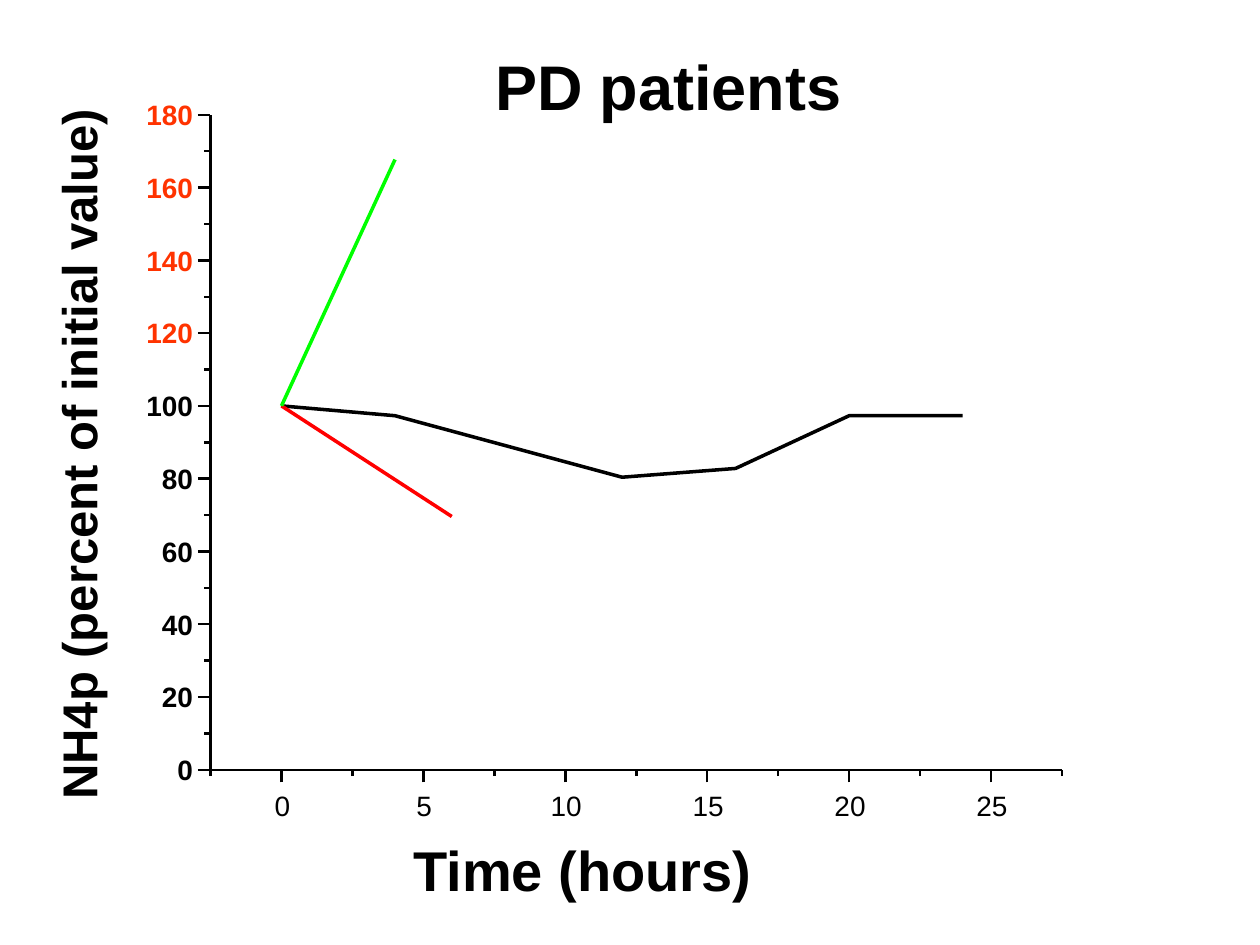
from lxml import etree
from pptx import Presentation
from pptx.dml.color import RGBColor
from pptx.enum.shapes import MSO_CONNECTOR
from pptx.enum.text import MSO_AUTO_SIZE, PP_ALIGN
from pptx.oxml.ns import qn
from pptx.util import Pt

STRAIGHT = MSO_CONNECTOR.STRAIGHT
FIT_TEXT = MSO_AUTO_SIZE.SHAPE_TO_FIT_TEXT
LEFT, CENTER, RIGHT = PP_ALIGN.LEFT, PP_ALIGN.CENTER, PP_ALIGN.RIGHT

COLORS = {"black": "000000", "orange": "FF3300", "red": "FF0000", "green": "00FF00"}
AXIS_LEFT, AXIS_RIGHT = 120.3, 606.9
AXIS_TOP, AXIS_BOTTOM = 65.6, 439.9
HOUR = (AXIS_RIGHT - AXIS_LEFT) / 30
PERCENT = (AXIS_BOTTOM - AXIS_TOP) / 180
ZERO_HOUR = AXIS_LEFT + 2.5 * HOUR
AXIS_WIDTH, SERIES_WIDTH = 1.38, 2
DIGIT_WIDTH, LABEL_HEIGHT = 8.9, 19.4

presentation = Presentation()
presentation.slide_width, presentation.slide_height = Pt(720), Pt(540)
slide = presentation.slides.add_slide(presentation.slide_layouts[6])


def add_text(text, box, size, bold=True, color="black", align=LEFT, inset=(0, 0)):
    shape = slide.shapes.add_textbox(*(Pt(length) for length in box))
    frame = shape.text_frame
    horizontal, vertical = (Pt(length) for length in inset)
    frame_format = {
        "margin_left": horizontal, "margin_right": horizontal,
        "margin_top": vertical, "margin_bottom": vertical,
        "word_wrap": False, "auto_size": FIT_TEXT,
    }
    for name, value in frame_format.items():
        setattr(frame, name, value)
    paragraph = frame.paragraphs[0]
    paragraph.alignment = align
    run = paragraph.add_run()
    run.text = text
    for name, value in {"name": "Arial", "size": Pt(size), "bold": bold}.items():
        setattr(run.font, name, value)
    run.font.color.rgb = RGBColor.from_string(COLORS[color])
    return shape


def add_line(start, end, width=AXIS_WIDTH, color="black"):
    connector = slide.shapes.add_connector(
        STRAIGHT, *(Pt(length) for length in (*start, *end)))
    connector.line.width = Pt(width)
    connector.line.color.rgb = RGBColor.from_string(COLORS[color])
    etree.SubElement(connector._element.spPr, qn("a:effectLst"))


value_title = add_text("NH4p (percent of initial value)", (-160.6, 238.3, 410.4, 41),
                       28, inset=(7.2, 3.6))
value_title.rotation = 270
add_text("Time (hours)", (236.2, 477.4, 193.7, 38.2), 32)

for hour in range(0, 26, 5):
    width = DIGIT_WIDTH * len(str(hour))
    left = ZERO_HOUR + hour * HOUR + 0.5 - width / 2
    add_text(str(hour), (left, 450.7, width, LABEL_HEIGHT), 16, bold=False, align=CENTER)

for percent in range(0, 181, 20):
    width = DIGIT_WIDTH * len(str(percent))
    top = AXIS_BOTTOM - percent * PERCENT - 9.8
    add_text(str(percent), (110.3 - width, top, width, LABEL_HEIGHT), 16,
             color="orange" if percent > 100 else "black", align=RIGHT)

for index in range(13):
    x = AXIS_LEFT + index * 2.5 * HOUR
    length = 7.2 if index % 2 else 3.6
    add_line((x, AXIS_BOTTOM + length), (x, AXIS_BOTTOM))
add_line((AXIS_LEFT, AXIS_BOTTOM), (AXIS_RIGHT, AXIS_BOTTOM))

for index in range(19):
    y = AXIS_BOTTOM - index * 10 * PERCENT
    length = 3.6 if index % 2 else 7.2
    add_line((AXIS_LEFT - length, y), (AXIS_LEFT, y))
add_line((AXIS_LEFT, AXIS_BOTTOM), (AXIS_LEFT, AXIS_TOP))

SERIES = [
    ("black", [(0, 100), (4, 97.3), (12, 80.4), (16, 82.8), (20, 97.3), (24, 97.3)]),
    ("red", [(0, 100), (6, 69.6)]),
    ("green", [(0, 100), (4, 167.7)]),
]
for color, values in SERIES:
    points = [(ZERO_HOUR + hour * HOUR, AXIS_BOTTOM - percent * PERCENT)
              for hour, percent in values]
    if len(points) == 2:
        add_line(*points, SERIES_WIDTH, color)
        continue
    corners = [(Pt(x), Pt(y)) for x, y in points]
    builder = slide.shapes.build_freeform(*corners[0])
    builder.add_line_segments(corners[1:], close=False)
    curve = builder.convert_to_shape()
    curve.shadow.inherit = False
    curve.fill.background()
    curve.line.width = Pt(SERIES_WIDTH)
    curve.line.color.rgb = RGBColor.from_string(COLORS[color])

add_text("PD patients", (275.8, 23.8, 212.4, 50.4), 36, inset=(7.2, 3.6))

presentation.save("out.pptx")
